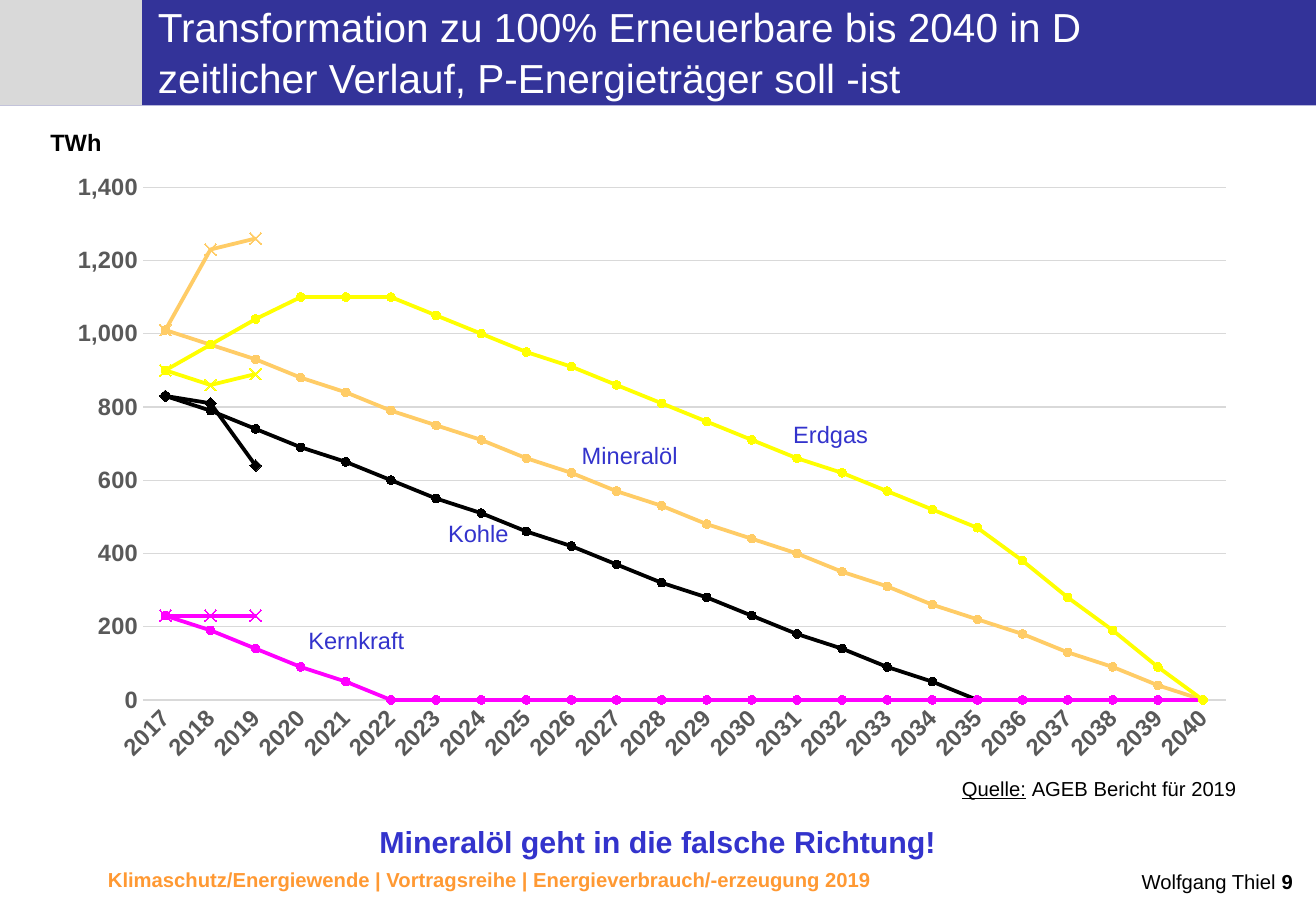
from lxml import etree
from pptx import Presentation
from pptx import util as u
from pptx.chart.data import CategoryChartData
from pptx.dml.color import RGBColor
from pptx.enum import chart as ch, shapes, text
from pptx.oxml.ns import qn

NAVY = RGBColor(0x33, 0x33, 0x99)
BLUE = RGBColor(0x33, 0x33, 0xCC)
GREY = RGBColor(0xD9, 0xD9, 0xD9)
AXIS_GREY = RGBColor(0x59, 0x59, 0x59)
ORANGE = RGBColor(0xFF, 0x99, 0x33)
WHITE = RGBColor(0xFF, 0xFF, 0xFF)
BLACK = RGBColor(0, 0, 0)
SAND = RGBColor(0xFF, 0xCC, 0x66)
MAGENTA = RGBColor(0xFF, 0, 0xFF)
YELLOW = RGBColor(0xFF, 0xFF, 0)

FONT = "Arial"
LEFT, CENTER, RIGHT = text.PP_ALIGN.LEFT, text.PP_ALIGN.CENTER, text.PP_ALIGN.RIGHT
CIRCLE, CROSS, DIAMOND = (ch.XL_MARKER_STYLE.CIRCLE, ch.XL_MARKER_STYLE.X,
                          ch.XL_MARKER_STYLE.DIAMOND)

TITLE = ("Transformation zu 100% Erneuerbare bis 2040 in D",
         "zeitlicher Verlauf, P-Energieträger soll -ist")
YEARS = range(2017, 2041)

# energy source, colour, marker of actual values, planned TWh, actual TWh
SOURCES = [
    ("Mineralöl", SAND, CROSS,
     [1010, 970, 930, 880, 840, 790, 750, 710, 660, 620, 570, 530,
      480, 440, 400, 350, 310, 260, 220, 180, 130, 90, 40, 0],
     [1010, 1230, 1260]),
    ("Kohle", BLACK, DIAMOND,
     [830, 790, 740, 690, 650, 600, 550, 510, 460, 420, 370, 320,
      280, 230, 180, 140, 90, 50] + [0] * 6,
     [830, 810, 640]),
    ("Kernkraft", MAGENTA, CROSS,
     [230, 190, 140, 90, 50] + [0] * 19,
     [230, 230, 230]),
    ("Erdgas", YELLOW, CROSS,
     [900, 970, 1040, 1100, 1100, 1100, 1050, 1000, 950, 910, 860, 810,
      760, 710, 660, 620, 570, 520, 470, 380, 280, 190, 90, 0],
     [900, 860, 890]),
]

# left, top, width, height in points
CHART_AREA = (32.4, 95.8, 708.5, 362.9)
PLOT_AREA = (84.7, 111, 641.8, 304)
BARS = [((0, 0, 780, 62.6), NAVY), ((0, 0, 84.2, 62.6), GREY)]

INSET = (7.2, 3.6)
# area, inset, wrap, alignment, size, colour, runs of (text, bold, underline)
TEXTS = [
    ((56.9, 510.5, 475, 21.6), INSET, True, LEFT, 12, ORANGE,
     [("Klimaschutz/Energiewende | Vortragsreihe | "
       "Energieverbrauch/-erzeugung 2019", True, False)]),
    ((576.7, 511.5, 196.6, 20), INSET, True, RIGHT, 12, BLACK,
     [("Wolfgang Thiel ", False, False), ("9", True, False)]),
    ((22.3, 483.1, 735.1, 31.7), (5, 5), True, CENTER, 18, BLUE,
     [("Mineralöl geht in die falsche Richtung!", True, False)]),
    ((22.3, 72, 45.4, 24.5), INSET, False, CENTER, 14, BLACK,
     [("TWh", True, False)]),
    ((570.2, 460.1, 164.2, 14.4), (0, 0), False, LEFT, 12, BLACK,
     [("Quelle:", False, True), (" ", True, False),
      ("AGEB Bericht für 2019", False, False)]),
]
CURVE_LABELS = [("Erdgas", 463, 245.5, 59), ("Mineralöl", 337.7, 257.8, 71.3),
                ("Kohle", 258.5, 303.8, 50.4), ("Kernkraft", 175.7, 367.2, 72)]
TEXTS += [((x, y, width, 24.5), INSET, False, LEFT, 14, BLUE, [(name, False, False)])
          for name, x, y, width in CURVE_LABELS]


def points(values):
    return [u.Pt(value) for value in values]


def style(font, size, color, bold=None):
    font.name, font.size, font.bold = FONT, u.Pt(size), bold
    font.color.rgb = color


def set_margins(frame, across, down):
    frame.margin_left = frame.margin_right = u.Pt(across)
    frame.margin_top = frame.margin_bottom = u.Pt(down)


def add_bar(page, area, color):
    bar = page.shapes.add_shape(shapes.MSO_SHAPE.RECTANGLE, *points(area))
    bar.shadow.inherit = False
    bar.fill.solid()
    bar.fill.fore_color.rgb = color
    bar.line.fill.background()


def fill_title(title):
    title.left, title.top, title.width, title.height = points((93.6, 0, 686, 58.3))
    frame = title.text_frame
    set_margins(frame, 0, 0)
    frame.word_wrap = True
    frame.auto_size = text.MSO_AUTO_SIZE.NONE
    frame.vertical_anchor = text.MSO_ANCHOR.TOP
    para = frame.paragraphs[0]
    para.alignment, para.line_spacing = LEFT, 1.05
    style(para.font, 24, WHITE)
    para.add_run().text = TITLE[0]
    para.add_line_break()
    para.add_run().text = TITLE[1]
    title.element.getparent().append(title.element)  # in front of the bars


def add_text(page, area, inset, wrap, alignment, size, color, runs):
    frame = page.shapes.add_textbox(*points(area)).text_frame
    set_margins(frame, *inset)
    frame.word_wrap = wrap
    para = frame.paragraphs[0]
    para.alignment = alignment
    style(para.font, size, color)
    for words, bold, underline in runs:
        span = para.add_run()
        span.text = words
        span.font.bold, span.font.underline = bold, underline


def place_plot(chart):
    """Fix the inner plot area as fractions of the chart area."""
    plot_area = chart.element.xpath("c:chart/c:plotArea")[0]
    for old in plot_area.findall(qn("c:layout")):
        plot_area.remove(old)
    layout = etree.Element(qn("c:layout"))
    manual = etree.SubElement(layout, qn("c:manualLayout"))
    left, top, width, height = CHART_AREA
    x, y, w, h = PLOT_AREA
    settings = [("layoutTarget", "inner"), ("xMode", "edge"), ("yMode", "edge"),
                ("x", (x - left) / width), ("y", (y - top) / height),
                ("w", w / width), ("h", h / height)]
    for tag, value in settings:
        etree.SubElement(manual, qn("c:" + tag)).set("val", str(value))
    plot_area.insert(0, layout)


def style_axes(chart):
    years, energy = chart.category_axis, chart.value_axis
    for axis in (years, energy):
        axis.major_tick_mark = axis.minor_tick_mark = ch.XL_TICK_MARK.NONE
        style(axis.tick_labels.font, 14, AXIS_GREY, True)
    energy.minimum_scale, energy.maximum_scale, energy.major_unit = 0, 1400, 200
    energy.tick_labels.number_format = "#,##0"
    energy.tick_labels.number_format_is_linked = False
    energy.format.line.fill.background()
    for line in (years.format.line, energy.major_gridlines.format.line):
        line.color.rgb, line.width = GREY, u.Pt(0.75)
    chart.element.xpath(".//c:catAx/c:txPr/a:bodyPr")[0].set("rot", "-2700000")


def add_energy_chart(page):
    data = CategoryChartData()
    data.categories = [str(year) for year in YEARS]
    looks = []
    for name, color, marker, planned, actual in SOURCES:
        data.add_series(name + " soll", planned)
        data.add_series(name + " ist", actual + [None] * (len(YEARS) - len(actual)))
        looks += [(color, CIRCLE, 5), (color, marker, 7)]
    chart = page.shapes.add_chart(
        ch.XL_CHART_TYPE.LINE_MARKERS, *points(CHART_AREA), data).chart
    chart.has_title = chart.has_legend = False
    style(chart.font, 10, BLACK)
    chart.plots[0].vary_by_categories = False
    for series, (color, marker, size) in zip(chart.plots[0].series, looks):
        series.smooth = False
        series.format.line.color.rgb, series.format.line.width = color, u.Pt(2.25)
        series.marker.style, series.marker.size = marker, size
        series.marker.format.fill.solid()
        series.marker.format.fill.fore_color.rgb = color
        series.marker.format.line.color.rgb = color
    style_axes(chart)
    place_plot(chart)


def main():
    deck = Presentation()
    deck.slide_width, deck.slide_height = points((780, 540))
    page = deck.slides.add_slide(deck.slide_layouts[5])
    for area, color in BARS:
        add_bar(page, area, color)
    fill_title(page.shapes.title)
    add_energy_chart(page)
    for item in TEXTS:
        add_text(page, *item)
    deck.save("out.pptx")


if __name__ == "__main__":
    main()
